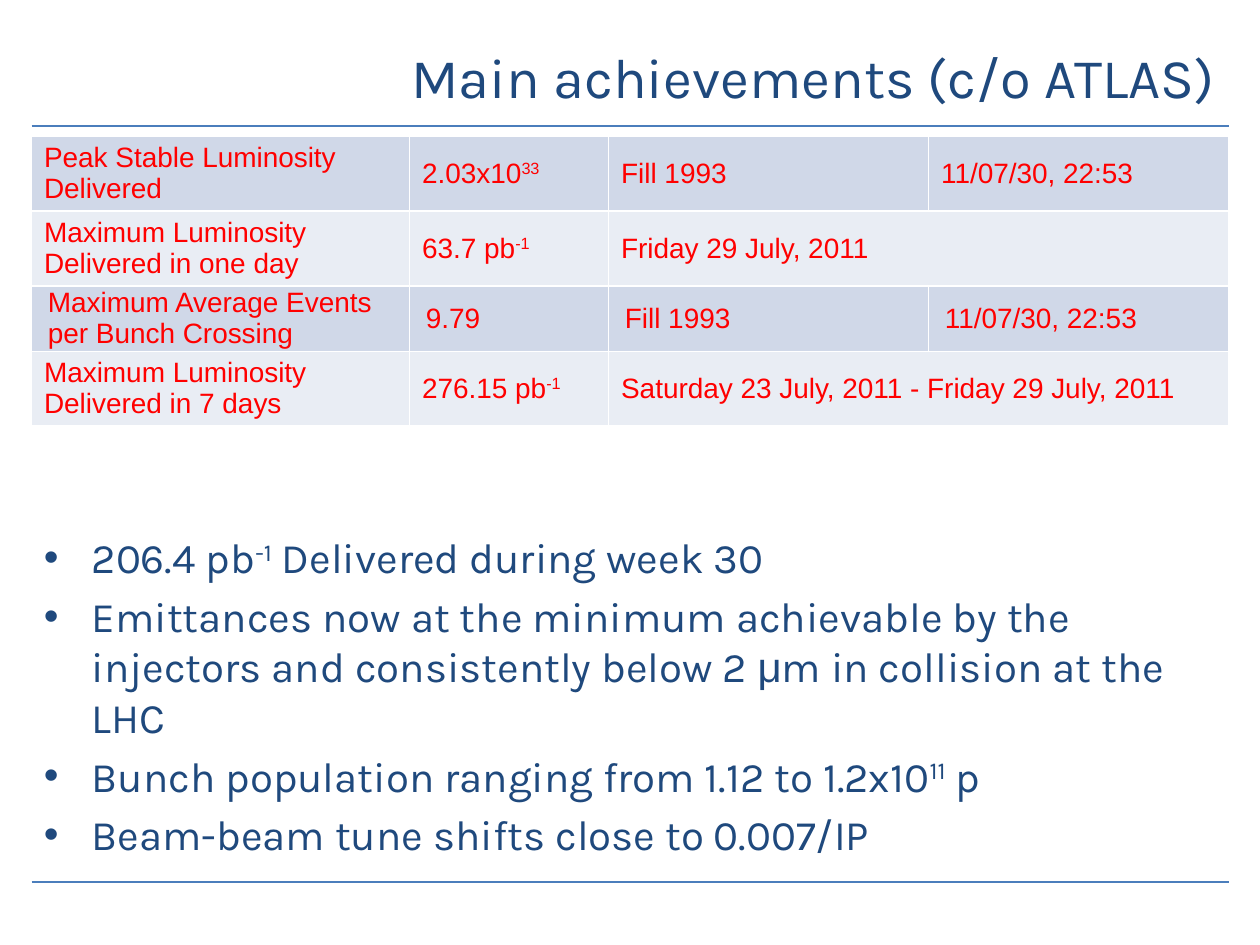
import pptx
import pptx.util
import pptx.dml.color
import pptx.enum.shapes
import pptx.enum.text
import pptx.oxml.ns
from lxml import etree

Inches = pptx.util.Inches
Pt = pptx.util.Pt
ANCHOR = pptx.enum.text.MSO_ANCHOR
ALIGN = pptx.enum.text.PP_ALIGN

WIDTH, HEIGHT, MARGIN = 10, 7.5, 0.25
CONTENT_WIDTH = WIDTH - 2 * MARGIN
NAVY, RED, RULE_BLUE, WHITE = "1F497D", "FF0000", "4B7EBC", "FFFFFF"
BANDS = ("D0D8E8", "E9EDF4")
TITLE_FORMAT = {"name": "Karla", "size": Pt(32)}
BULLET_FORMAT = {"name": "Karla", "size": Pt(24)}
CELL_FORMAT = {"name": "Arial", "size": Pt(16)}
RAISED = "raised"
COLUMN_WIDTHS = (3, 1.58, 2.54, 2.38)
ROW_HEIGHTS = (0.59, 0.59, 0.52, 0.59)
INDENTED_ROW = 2
ACHIEVEMENTS = (
    (["Peak Stable Luminosity Delivered"], ["2.03x10", ("33", RAISED)],
     ["Fill 1993"], ["11/07/30, 22:53"]),
    (["Maximum Luminosity Delivered in one day"], ["63.7 pb", ("-1", RAISED)],
     ["Friday 29 July, 2011"]),
    (["Maximum Average Events per Bunch Crossing"], ["9.79"],
     ["Fill 1993"], ["11/07/30, 22:53"]),
    (["Maximum Luminosity Delivered in 7 days"], ["276.15 pb", ("-1", RAISED)],
     ["Saturday 23 July, 2011 - Friday 29 July, 2011"]),
)
BULLETS = (
    ["206.4 pb", ("-1", RAISED), " Delivered during week 30"],
    ["Emittances now at the minimum achievable by the injectors "
     "and consistently below 2 ", ("μ", "Arial"), "m in collision at the LHC"],
    ["Bunch population ranging from 1.12 to 1.2x10", ("11", RAISED), " p"],
    ["Beam-beam tune shifts close to 0.007/IP"],
)


def color(value):
    """Turn a hex string into a colour."""
    return pptx.dml.color.RGBColor.from_string(value)


def apply(target, values):
    """Set attributes of an object from a dict."""
    for name, value in values.items():
        setattr(target, name, value)


def add_element(parent, tag, **attributes):
    """Append a drawing element with the given attributes."""
    return etree.SubElement(parent, pptx.oxml.ns.qn(tag), attributes)


def write(para, pieces, font_format, ink):
    """Fill a paragraph with plain, raised or differently set pieces."""
    for piece in pieces:
        text, variant = (piece, None) if isinstance(piece, str) else piece
        span = para.add_run()
        span.text = text
        apply(span.font, font_format)
        span.font.color.rgb = color(ink)
        if variant == RAISED:
            span.font._element.set("baseline", "30000")
        elif variant:
            span.font.name = variant


def add_rule(page, top):
    """Draw a horizontal rule across the content width."""
    rule = page.shapes.add_connector(
        pptx.enum.shapes.MSO_CONNECTOR.STRAIGHT,
        Inches(MARGIN), Inches(top), Inches(WIDTH - MARGIN), Inches(top))
    rule.line.color.rgb = color(RULE_BLUE)
    rule.line.width = Pt(1.5)
    add_element(rule._element.spPr, "a:effectLst")


def set_title(page, text):
    """Place and fill the title placeholder."""
    title = page.shapes.title
    apply(title, {"left": Inches(1.75), "top": Inches(0.17),
                  "width": Inches(8), "height": Inches(0.87)})
    apply(title.text_frame, {"vertical_anchor": ANCHOR.MIDDLE, "word_wrap": True,
                             "auto_size": pptx.enum.text.MSO_AUTO_SIZE.NONE})
    para = title.text_frame.paragraphs[0]
    para.alignment = ALIGN.RIGHT
    write(para, [text], TITLE_FORMAT, NAVY)


def style_cell(cell, fill):
    """Give a cell its band fill and thin white borders."""
    properties = cell._tc.get_or_add_tcPr()
    for side in ("a:lnL", "a:lnR", "a:lnT", "a:lnB"):
        border = add_element(properties, side, w=str(Pt(1)))
        add_element(add_element(border, "a:solidFill"), "a:srgbClr", val=WHITE)
    cell.fill.solid()
    cell.fill.fore_color.rgb = color(fill)
    cell.vertical_anchor = ANCHOR.MIDDLE


def add_achievements(page, top):
    """Build the banded table, merging the tail of short rows."""
    table = page.shapes.add_table(
        len(ROW_HEIGHTS), len(COLUMN_WIDTHS), Inches(MARGIN), Inches(top),
        Inches(CONTENT_WIDTH), Inches(sum(ROW_HEIGHTS))).table
    table.first_row = False
    for column, width in zip(table.columns, COLUMN_WIDTHS):
        column.width = Inches(width)
    for index, (height, entries) in enumerate(zip(ROW_HEIGHTS, ACHIEVEMENTS)):
        table.rows[index].height = Inches(height)
        for cell in table.rows[index].cells:
            style_cell(cell, BANDS[index % 2])
        if len(entries) < len(COLUMN_WIDTHS):
            table.cell(index, len(entries) - 1).merge(
                table.cell(index, len(COLUMN_WIDTHS) - 1))
        for position, pieces in enumerate(entries):
            cell = table.cell(index, position)
            para = cell.text_frame.paragraphs[0]
            if index == INDENTED_ROW:
                apply(cell, {"margin_left": Inches(0.03), "margin_right": Inches(0.03),
                             "margin_top": Inches(0.01), "margin_bottom": Inches(0.01)})
                para._p.get_or_add_pPr().set("marL", str(Inches(0.1)))
            write(para, pieces, CELL_FORMAT, RED)


def add_bullets(page, top, height):
    """Add the bulleted list below the table."""
    box = page.shapes.add_textbox(
        Inches(MARGIN), Inches(top), Inches(CONTENT_WIDTH), Inches(height))
    frame = box.text_frame
    frame.word_wrap = True
    for index, pieces in enumerate(BULLETS):
        para = frame.add_paragraph() if index else frame.paragraphs[0]
        properties = para._p.get_or_add_pPr()
        properties.set("marL", str(Inches(0.38)))
        properties.set("indent", str(Inches(-0.38)))
        add_element(properties, "a:buFont", typeface="Arial")
        add_element(properties, "a:buChar", char="•")
        para.space_before = Pt(4.8 if index else 0)
        write(para, pieces, BULLET_FORMAT, NAVY)


def main():
    """Build and save the slide."""
    deck = pptx.Presentation()
    apply(deck, {"slide_width": Inches(WIDTH), "slide_height": Inches(HEIGHT)})
    page = deck.slides.add_slide(deck.slide_layouts[5])
    for top in (1, 7):
        add_rule(page, top)
    add_achievements(page, 1.08)
    set_title(page, "Main achievements (c/o ATLAS)")
    add_bullets(page, 4.17, 2.75)
    deck.save("out.pptx")


if __name__ == "__main__":
    main()
